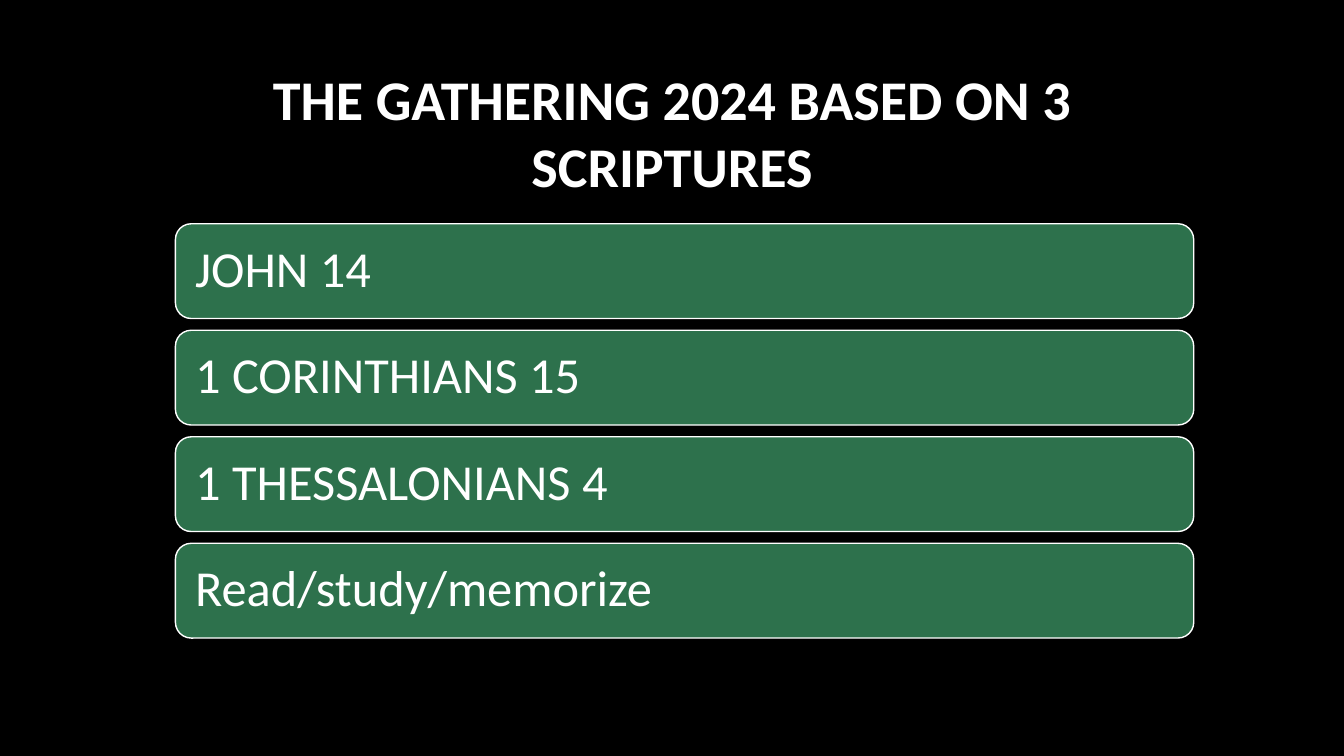
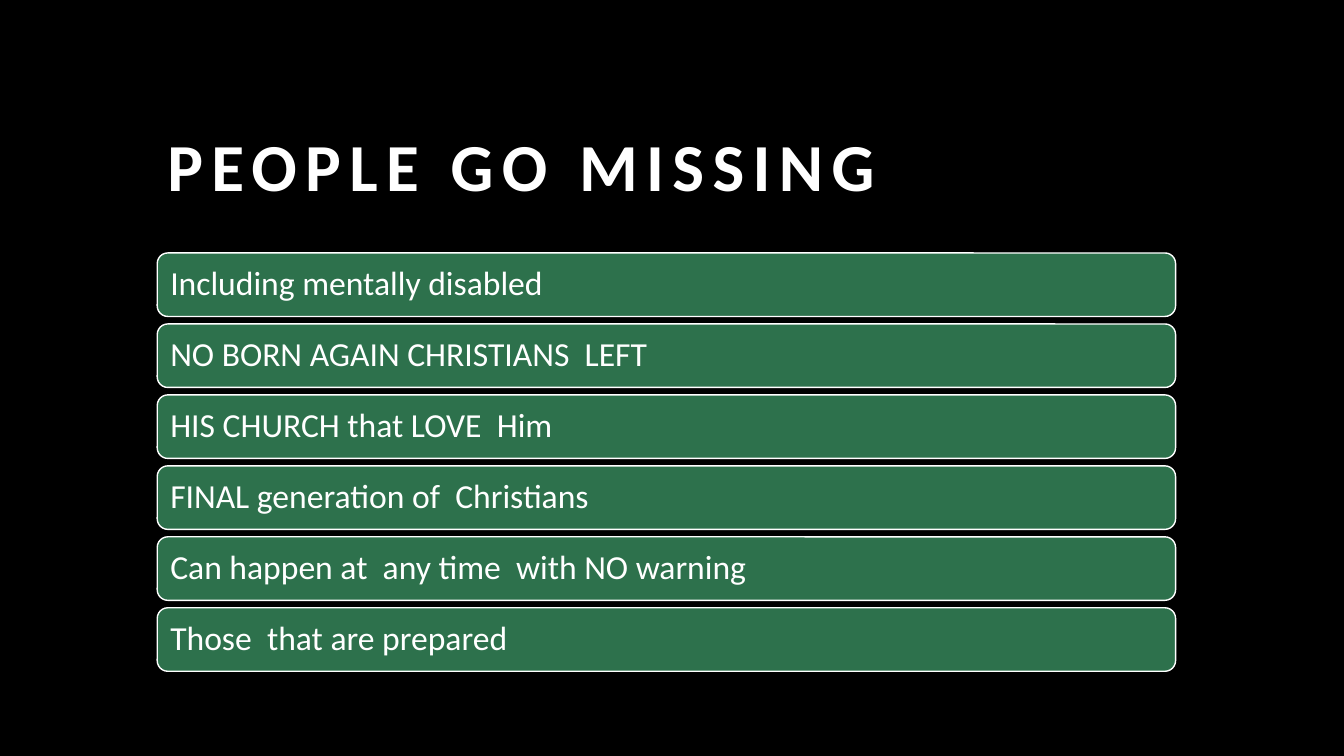
from dataclasses import dataclass

from pptx import Presentation
from pptx.dml.color import RGBColor
from pptx.enum.shapes import MSO_SHAPE
from pptx.enum.text import MSO_ANCHOR, MSO_AUTO_SIZE, PP_ALIGN
from pptx.util import Inches, Pt


@dataclass(frozen=True)
class Theme:
    """Colours, font and type sizes of the deck."""
    back: RGBColor = RGBColor(0x00, 0x00, 0x00)
    bar: RGBColor = RGBColor(0x2D, 0x71, 0x4C)
    text: RGBColor = RGBColor(0xFF, 0xFF, 0xFF)
    font: str = "Calibri"
    head: int = 40
    lead: int = 48
    large: int = 36
    small: int = 24


THEME = Theme()


def write(frame, text, size, align, leading, bold=False):
    """Write one styled run into a text frame and return it."""
    para = frame.paragraphs[0]
    para.alignment = align
    para.line_spacing = leading
    run = para.add_run()
    run.text = text
    run.font.name = THEME.font
    run.font.size = Pt(size)
    run.font.bold = bold
    run.font.color.rgb = THEME.text
    return run


def add_title(slide, text, box, size, anchor, align, leading=1.0, track=0):
    """Place and format the slide title, with letter spacing in points."""
    title = slide.shapes.title
    title.left, title.top, title.width, title.height = map(Inches, box)
    frame = title.text_frame
    frame.auto_size = MSO_AUTO_SIZE.NONE
    frame.word_wrap = True
    frame.vertical_anchor = anchor
    run = write(frame, text, size, align, leading, bold=True)
    if track:
        run.font._element.set("spc", str(track * 100))


def add_bar(slide, text, left, top, height, size, inset):
    """Draw one rounded bar holding a line of text."""
    bar = slide.shapes.add_shape(
        MSO_SHAPE.ROUNDED_RECTANGLE,
        Inches(left), Inches(top), Inches(10.1), Inches(height))
    bar.shadow.inherit = False
    bar.fill.solid()
    bar.fill.fore_color.rgb = THEME.bar
    bar.line.color.rgb = THEME.text
    bar.line.width = Pt(1)
    frame = bar.text_frame
    frame.word_wrap = True
    frame.vertical_anchor = MSO_ANCHOR.MIDDLE
    frame.margin_left = frame.margin_right = Inches(inset)
    frame.margin_top = frame.margin_bottom = Inches(inset)
    write(frame, text, size, PP_ALIGN.LEFT, 0.9)


def add_bars(slide, items, left, first, last, height, size, inset):
    """Stack bars evenly between the first and the last top."""
    pitch = (last - first) / (len(items) - 1)
    for row, text in enumerate(items):
        add_bar(slide, text, left, first + row * pitch, height, size, inset)


def main():
    """Build the deck and save it."""
    deck = Presentation()
    deck.slide_width, deck.slide_height = Inches(13.33), Inches(7.5)
    fill = deck.slide_master.background.fill
    fill.solid()
    fill.fore_color.rgb = THEME.back
    layout = deck.slide_layouts.get_by_name("Title Only")

    slide = deck.slides.add_slide(layout)
    add_title(slide, "THE GATHERING 2024 BASED ON 3 SCRIPTURES",
              (1.2, 0.59, 10.93, 1.43), THEME.head,
              MSO_ANCHOR.TOP, PP_ALIGN.CENTER)
    add_bars(slide, ["JOHN 14", "1 CORINTHIANS 15", "1 THESSALONIANS 4",
                     "Read/study/memorize"],
             1.74, 2.22, 5.39, 0.94, THEME.large, 0.15)

    slide = deck.slides.add_slide(layout)
    add_title(slide, "PEOPLE GO MISSING", (1.56, 1.14, 10.1, 0.94),
              THEME.lead, MSO_ANCHOR.BOTTOM, PP_ALIGN.LEFT, 1.2, 6)
    add_bars(slide, ["Including mentally disabled",
                     "NO BORN AGAIN CHRISTIANS  LEFT",
                     "HIS CHURCH that LOVE  Him",
                     "FINAL generation of  Christians",
                     "Can happen at  any time  with NO warning",
                     "Those  that are prepared"],
             1.56, 2.51, 6.03, 0.63, THEME.small, 0.1)

    deck.save("out.pptx")


if __name__ == "__main__":
    main()
